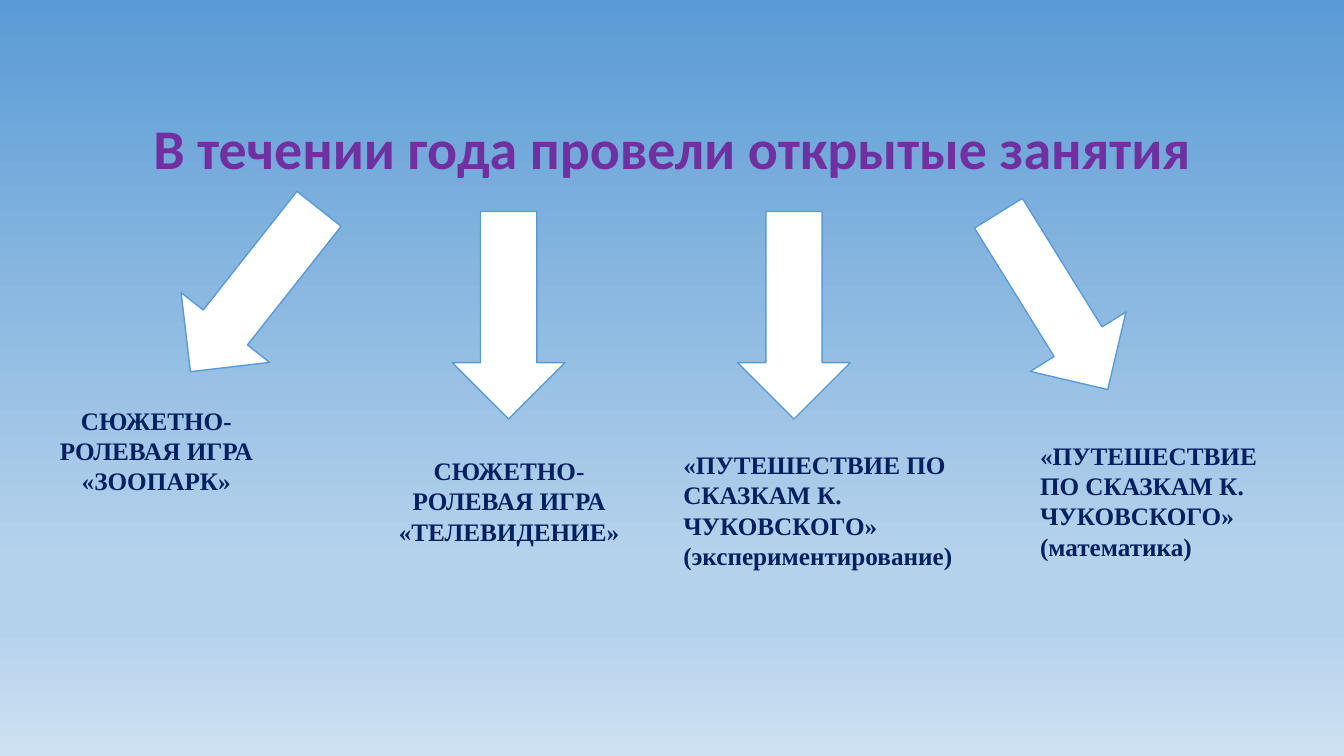
from lxml import etree
from pptx import Presentation
from pptx.dml.color import RGBColor
from pptx.enum.shapes import MSO_SHAPE
from pptx.enum.text import MSO_ANCHOR, MSO_AUTO_SIZE, PP_ALIGN
from pptx.oxml.ns import qn
from pptx.util import Cm, Pt

DOWN_ARROW = MSO_SHAPE.DOWN_ARROW
BOTTOM = MSO_ANCHOR.BOTTOM
GROW = MSO_AUTO_SIZE.SHAPE_TO_FIT_TEXT
NO_FIT = MSO_AUTO_SIZE.NONE
LEFT, CENTER = PP_ALIGN.LEFT, PP_ALIGN.CENTER

PURPLE = RGBColor(0x70, 0x30, 0xA0)
NAVY = RGBColor(0x00, 0x20, 0x60)
WHITE = RGBColor(0xFF, 0xFF, 0xFF)
BLUE = RGBColor(0x5B, 0x9B, 0xD5)
LIGHT_BLUE = RGBColor(0xB5, 0xD2, 0xEC)
PALE_BLUE = RGBColor(0xCE, 0xE1, 0xF2)


def add_text(p, text, font, size, color):
    r = p.add_run()
    r.text = text
    for name, value in {"name": font, "size": Pt(size), "bold": True}.items():
        setattr(r.font, name, value)
    r.font.color.rgb = color


prs = Presentation()
prs.slide_width, prs.slide_height = Cm(33.87), Cm(19.05)
s = prs.slides.add_slide(prs.slide_layouts[5])

# Background gradient, top to bottom
fill = s.background.fill
fill.gradient()
fill.gradient_angle = 270
stops = next(s.element.iter(qn("a:gsLst")))
for stop in list(stops):
    stops.remove(stop)
for percent, color in [(0, BLUE), (74, LIGHT_BLUE), (83, LIGHT_BLUE), (100, PALE_BLUE)]:
    stop = etree.SubElement(stops, qn("a:gs"), pos=str(percent * 1000))
    etree.SubElement(stop, qn("a:srgbClr"), val=str(color))

# Title
title = s.shapes.title
title.left, title.top, title.width, title.height = Cm(2.33), Cm(1.02), Cm(29.21), Cm(3.68)
tf = title.text_frame
tf.auto_size = NO_FIT
tf.word_wrap = True
tf.vertical_anchor = BOTTOM
p = tf.paragraphs[0]
p.alignment = CENTER
p.line_spacing = 0.9
add_text(p, "В течении года провели открытые занятия", "Calibri", 40, PURPLE)

# Arrows: left, top, rotation
ARROWS = [(5, 4.7, 38.3), (11.4, 5.33, 0), (18.59, 5.33, 0), (25.12, 4.98, 328.2)]
for left, top, rotation in ARROWS:
    arrow = s.shapes.add_shape(DOWN_ARROW, Cm(left), Cm(top), Cm(2.84), Cm(5.23))
    arrow.rotation = rotation
    arrow.shadow.inherit = False
    arrow.fill.solid()
    arrow.fill.fore_color.rgb = WHITE
    arrow.line.color.rgb = BLUE
    arrow.line.width = Pt(1)

# Lessons: left, top, width, height, alignment, space after, paragraphs
TALES = "«ПУТЕШЕСТВИЕ ПО СКАЗКАМ К. ЧУКОВСКОГО»"
GAME = "СЮЖЕТНО-РОЛЕВАЯ ИГРА "
LESSONS = [
    (0.64, 10.08, 6.6, 2.57, CENTER, 10, [GAME + "«ЗООПАРК»"]),
    (9.53, 11.35, 6.6, 2.57, CENTER, 10, [GAME + "«ТЕЛЕВИДЕНИЕ»"]),
    (16.97, 11.2, 7.37, 3.33, LEFT, 0, [TALES, "(экспериментирование)"]),
    (25.96, 10.97, 6.32, 3.33, LEFT, 0, [TALES, "(математика)"]),
]
for left, top, width, height, alignment, space_after, lines in LESSONS:
    box = s.shapes.add_textbox(Cm(left), Cm(top), Cm(width), Cm(height))
    tf = box.text_frame
    tf.word_wrap = True
    tf.auto_size = GROW
    for i, line in enumerate(lines):
        p = tf.add_paragraph() if i else tf.paragraphs[0]
        p.alignment = alignment
        p.space_after = Pt(space_after)
        add_text(p, line, "Times New Roman", 18, NAVY)

prs.save("out.pptx")
